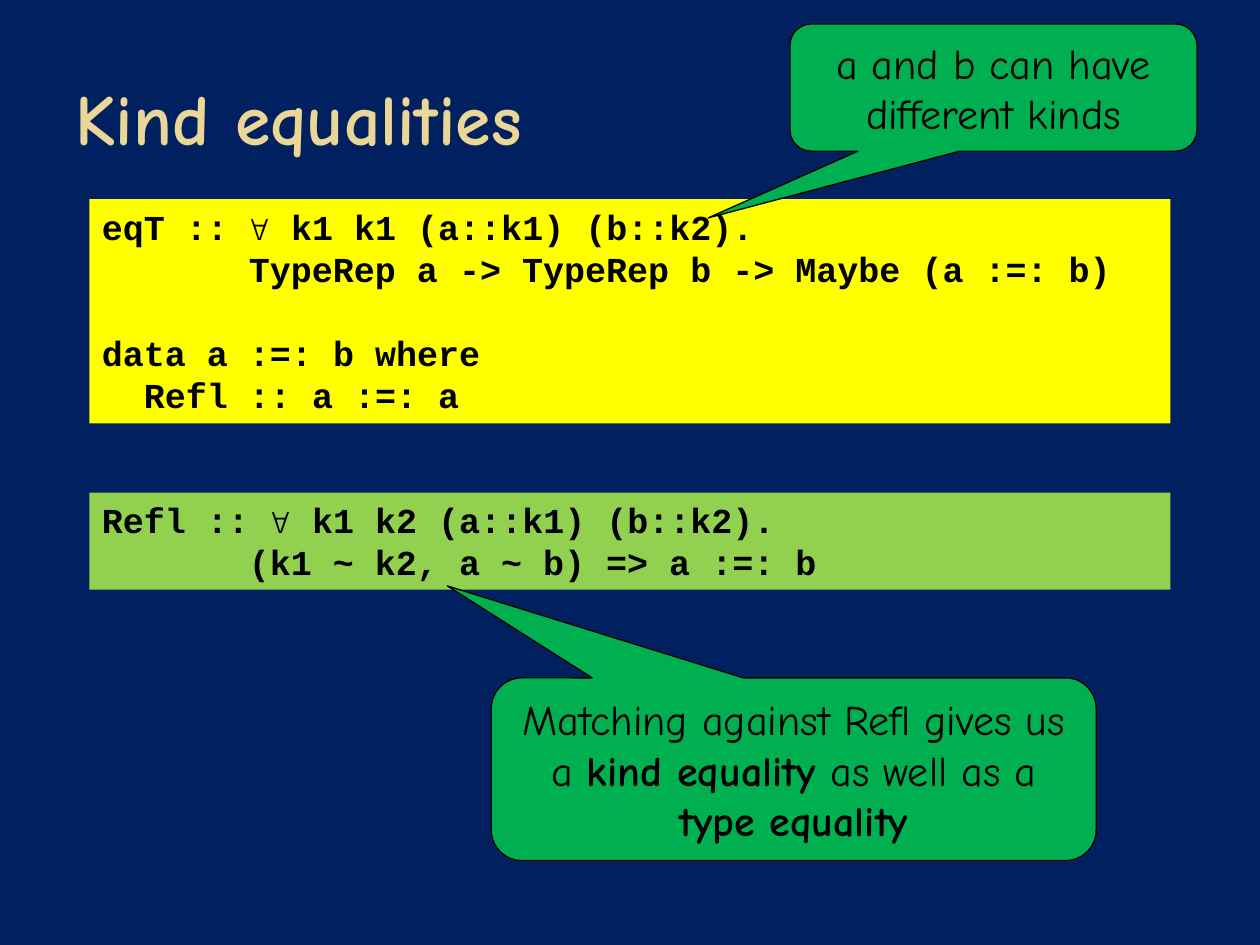
from pptx import Presentation
from pptx.dml.color import RGBColor
from pptx.enum import shapes, text
from pptx.util import Inches, Pt

NAVY = RGBColor(0x00, 0x20, 0x60)
GOLD = RGBColor(0xEA, 0xD6, 0x96)
YELLOW = RGBColor(0xFF, 0xFF, 0x00)
LIME = RGBColor(0x92, 0xD0, 0x50)
GREEN = RGBColor(0x00, 0xB0, 0x50)
BLACK = RGBColor(0x00, 0x00, 0x00)

BODY_FONT, CODE_FONT = "Comic Neue", "Courier New"
CODE_SIZE, LINE_PITCH = 20, 24
CHAR_WIDTH = 0.6 * CODE_SIZE  # points per monospaced character

TITLE = "Kind equalities"

# top, height, fill, lines of (indent in characters, blank lines before, code)
CODE_BOXES = [
    (1.58, 1.78, YELLOW, [
        (0, 0, "eqT :: ∀ k1 k1 (a::k1) (b::k2)."),
        (7, 0, "TypeRep a -> TypeRep b -> Maybe (a :=: b)"),
        (0, 1, "data a :=: b where"),
        (2, 0, "Refl :: a :=: a"),
    ]),
    (3.91, 0.77, LIME, [
        (0, 0, "Refl :: ∀ k1 k2 (a::k1) (b::k2)."),
        (7, 0, "(k1 ~ k2, a ~ b) => a :=: b"),
    ]),
]

# left, top, width, height, pointer tip (x, y), runs of (text, bold)
CALLOUTS = [
    (6.27, 0.19, 3.23, 1.01, (5.62, 1.73),
     [("a and b can have different kinds", False)]),
    (3.9, 5.38, 4.8, 1.45, (3.55, 4.65),
     [("Matching against Refl gives us a ", False), ("kind equality ", True),
      ("as well as a ", False), ("type equality", True)]),
]


def add_run(p, words, font, size, color, bold):
    r = p.add_run()
    r.text = words
    r.font.name, r.font.size, r.font.bold = font, Pt(size), bold
    r.font.color.rgb = color


def add_filled(slide, kind, box, fill):
    sp = slide.shapes.add_shape(kind, *map(Inches, box))
    sp.shadow.inherit = False
    sp.fill.solid()
    sp.fill.fore_color.rgb = fill
    sp.text_frame.word_wrap = True
    return sp


def add_code(slide, top, height, fill, lines):
    sp = add_filled(slide, shapes.MSO_SHAPE.RECTANGLE, (0.71, top, 8.58, height), fill)
    sp.line.fill.background()
    tf = sp.text_frame
    tf.vertical_anchor = text.MSO_ANCHOR.TOP
    for i, (indent, blanks, code) in enumerate(lines):
        p = tf.add_paragraph() if i else tf.paragraphs[0]
        p.alignment = text.PP_ALIGN.LEFT
        p.line_spacing = Pt(LINE_PITCH)
        p.space_before = Pt(blanks * LINE_PITCH)
        p._p.get_or_add_pPr().set("marL", str(Pt(indent * CHAR_WIDTH)))
        add_run(p, code, CODE_FONT, CODE_SIZE, BLACK, True)


def add_callout(slide, left, top, width, height, tip, runs):
    sp = add_filled(slide, shapes.MSO_SHAPE.ROUNDED_RECTANGULAR_CALLOUT,
                    (left, top, width, height), GREEN)
    sp.line.color.rgb = BLACK
    sp.line.width = Pt(0.75)
    # The tip is stored relative to the centre, as a share of the size
    sp.adjustments[0] = (tip[0] - left) / width - 0.5
    sp.adjustments[1] = (tip[1] - top) / height - 0.5
    tf = sp.text_frame
    tf.vertical_anchor = text.MSO_ANCHOR.MIDDLE
    p = tf.paragraphs[0]
    p.alignment = text.PP_ALIGN.CENTER
    for words, bold in runs:
        add_run(p, words, BODY_FONT, 24, BLACK, bold)


def add_title(slide):
    box = slide.shapes.add_textbox(*map(Inches, (0.5, 0.3, 9, 1.25)))
    tf = box.text_frame
    tf.word_wrap = True
    tf.vertical_anchor = text.MSO_ANCHOR.MIDDLE
    add_run(tf.paragraphs[0], TITLE, BODY_FONT, 41, GOLD, True)


def main():
    prs = Presentation()
    prs.slide_width, prs.slide_height = Inches(10), Inches(7.5)
    slide = prs.slides.add_slide(prs.slide_layouts[6])
    slide.background.fill.solid()
    slide.background.fill.fore_color.rgb = NAVY
    add_title(slide)
    for code_box in CODE_BOXES:
        add_code(slide, *code_box)
    for callout in CALLOUTS:
        add_callout(slide, *callout)
    prs.save("out.pptx")


if __name__ == "__main__":
    main()
